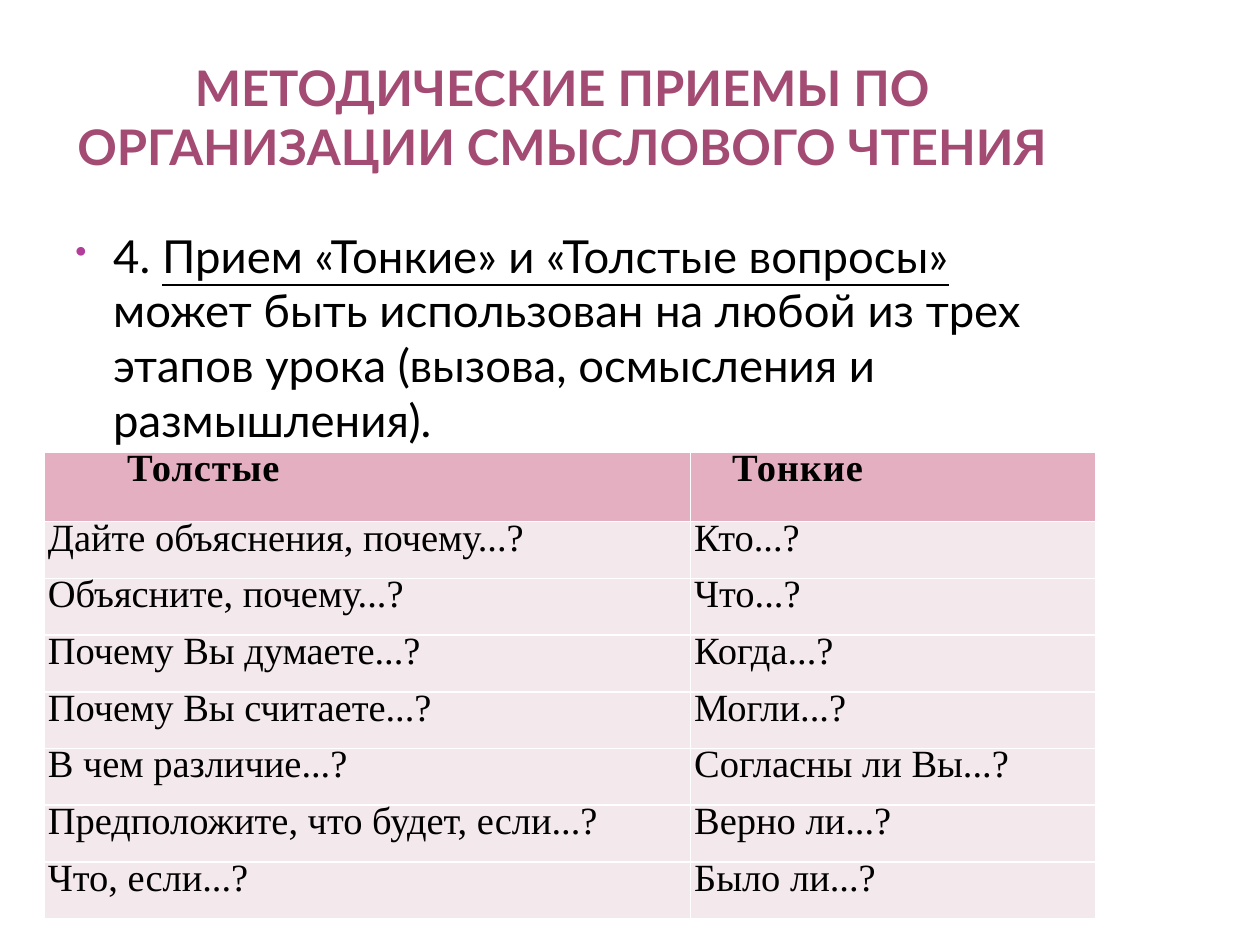
from lxml.etree import SubElement
from pptx import Presentation
from pptx.dml.color import RGBColor
from pptx.enum.text import MSO_ANCHOR, PP_ALIGN
from pptx.oxml.ns import qn
from pptx.util import Inches, Pt

COLORS = {
    "title": "A34B73",
    "text": "000000",
    "bullet": "B13F9A",
    "header": "E5AFC2",
    "row": "F3E8EB",
    "border": "FFFFFF",
}
COLUMN_WIDTHS = (5.13, 3.22)
HEADER_INDENTS = (0.63, 0.3)
HEADER_HEIGHT, ROW_HEIGHT = 0.55, 0.45
QUESTIONS = [
    ("Толстые", "Тонкие"),
    ("Дайте объяснения, почему...?", "Кто...?"),
    ("Объясните, почему...?", "Что...?"),
    ("Почему Вы думаете...?", "Когда...?"),
    ("Почему Вы считаете...?", "Могли...?"),
    ("В чем различие...?", "Согласны ли Вы...?"),
    ("Предположите, что будет, если...?", "Верно ли...?"),
    ("Что, если...?", "Было ли...?"),
]


def set_font(paragraph, name, size, color, bold=False):
    font = paragraph.font
    font.name = name
    font.size = Pt(size)
    font.bold = bold
    font.color.rgb = RGBColor.from_string(COLORS[color])


def add_text_box(slide, left, top, width, height):
    shape = slide.shapes.add_textbox(
        Inches(left), Inches(top), Inches(width), Inches(height))
    shape.text_frame.word_wrap = True
    return shape.text_frame


def add_title(slide, text):
    frame = add_text_box(slide, 0.5, 0.35, 7.92, 1.04)
    frame.vertical_anchor = MSO_ANCHOR.BOTTOM
    frame.margin_left = frame.margin_right = Inches(0.05)
    frame.margin_top = frame.margin_bottom = 0
    paragraph = frame.paragraphs[0]
    paragraph.text = text
    paragraph.alignment = PP_ALIGN.CENTER
    set_font(paragraph, "Lato", 28, "title", bold=True)


def add_bullet(paragraph):
    properties = paragraph._p.get_or_add_pPr()
    properties.set("marL", str(Inches(0.3)))
    properties.set("indent", str(Inches(-0.3)))
    color = SubElement(properties, qn("a:buClr"))
    SubElement(color, qn("a:srgbClr"), val=COLORS["bullet"])
    SubElement(properties, qn("a:buSzPct"), val="73000")
    SubElement(properties, qn("a:buChar"), char="•")


def add_body(slide, runs):
    """Add one bulleted paragraph from (text, underlined) pairs."""
    paragraph = add_text_box(slide, 0.5, 1.76, 7.92, 1.91).paragraphs[0]
    add_bullet(paragraph)
    set_font(paragraph, "Lato", 26, "text")
    for text, underlined in runs:
        run = paragraph.add_run()
        run.text = text
        run.font.underline = underlined


def set_borders(cell):
    properties = cell._tc.get_or_add_tcPr()
    for side in ("lnL", "lnR", "lnT", "lnB"):
        line = SubElement(properties, qn(f"a:{side}"), w=str(Pt(1)))
        fill = SubElement(line, qn("a:solidFill"))
        SubElement(fill, qn("a:srgbClr"), val=COLORS["border"])


def fill_cell(cell, text, is_header, indent):
    set_borders(cell)
    cell.fill.solid()
    cell.fill.fore_color.rgb = RGBColor.from_string(
        COLORS["header" if is_header else "row"])
    cell.margin_left = cell.margin_right = Inches(0.03)
    cell.margin_top, cell.margin_bottom = Inches(0.15), 0
    paragraph = cell.text_frame.paragraphs[0]
    paragraph.line_spacing = Pt(10.8)
    run = paragraph.add_run()
    run.text = text
    if is_header:
        paragraph._p.get_or_add_pPr().set("marL", str(Inches(indent)))
        run._r.get_or_add_rPr().set("spc", "50")
    set_font(paragraph, "Times New Roman", 22, "text", bold=is_header)


def add_question_table(slide):
    height = HEADER_HEIGHT + ROW_HEIGHT * (len(QUESTIONS) - 1)
    table = slide.shapes.add_table(
        len(QUESTIONS), len(COLUMN_WIDTHS), Inches(0.35), Inches(3.59),
        Inches(sum(COLUMN_WIDTHS)), Inches(height)).table
    for column, width in zip(table.columns, COLUMN_WIDTHS):
        column.width = Inches(width)
    for row_index, texts in enumerate(QUESTIONS):
        is_header = row_index == 0
        table.rows[row_index].height = Inches(
            HEADER_HEIGHT if is_header else ROW_HEIGHT)
        for column_index, text in enumerate(texts):
            fill_cell(table.cell(row_index, column_index), text,
                      is_header, HEADER_INDENTS[column_index])


def main():
    presentation = Presentation()
    presentation.slide_width = Inches(10)
    presentation.slide_height = Inches(7.5)
    slide = presentation.slides.add_slide(presentation.slide_layouts[6])
    add_title(slide, "МЕТОДИЧЕСКИЕ ПРИЕМЫ ПО ОРГАНИЗАЦИИ СМЫСЛОВОГО ЧТЕНИЯ")
    add_body(slide, [
        ("4. ", False),
        ("Прием «Тонкие» и «Толстые вопросы»", True),
        (" может быть использован на любой из трех этапов урока "
         "(вызова, осмысления и размышления).", False),
    ])
    add_question_table(slide)
    presentation.save("out.pptx")


if __name__ == "__main__":
    main()
